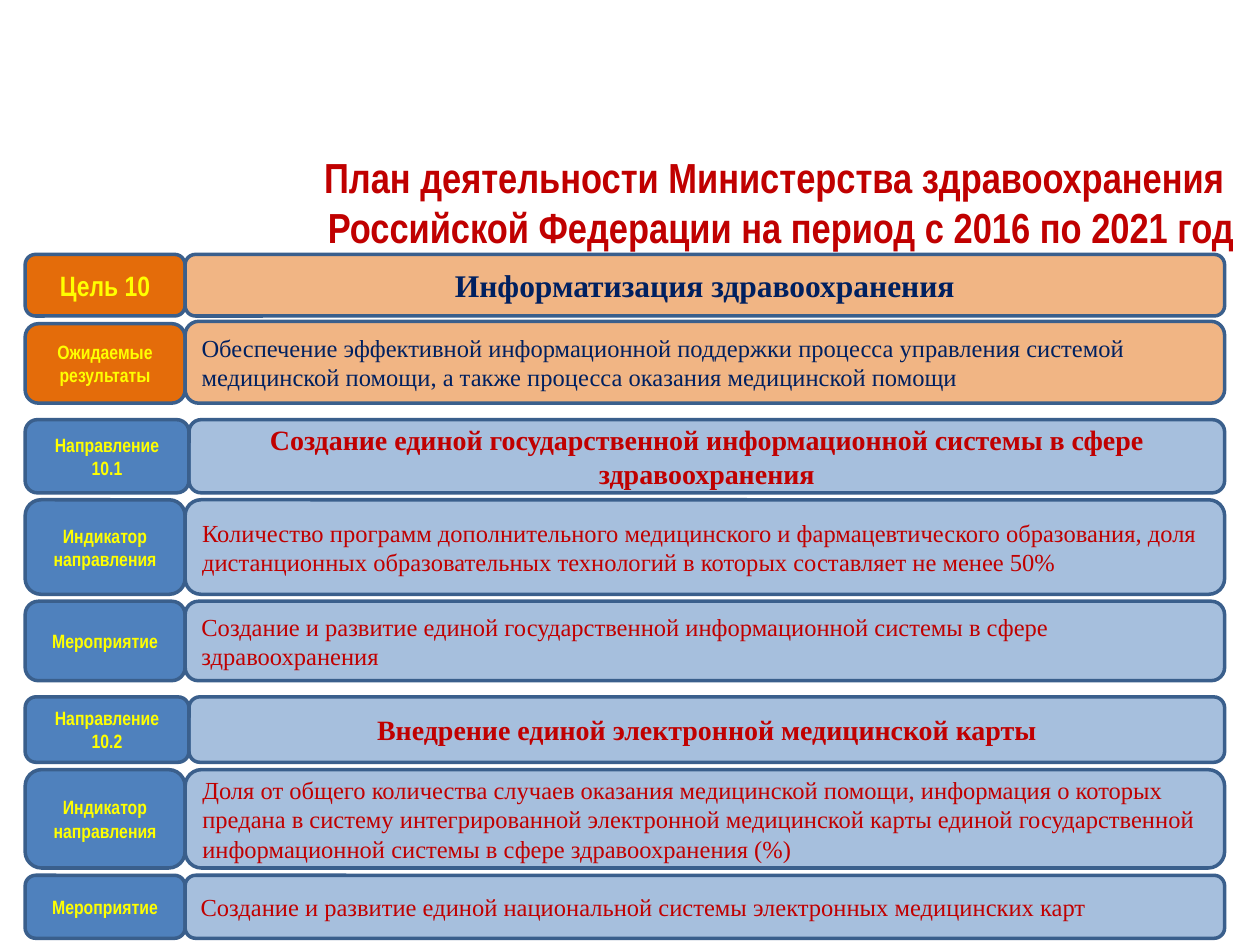
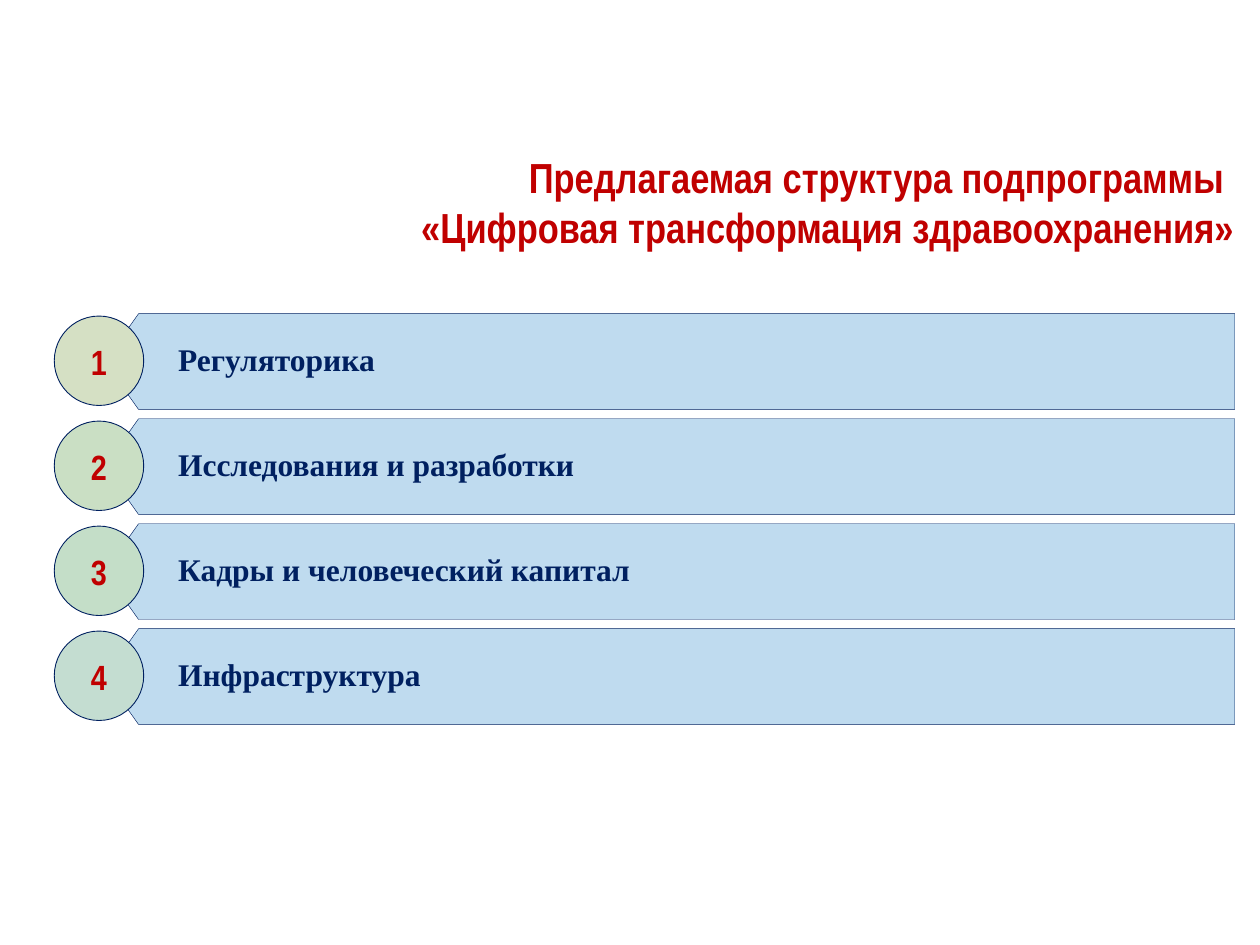
import pptx
import pptx.util
import pptx.dml.color
import pptx.enum.shapes
import pptx.enum.text
from lxml import etree
from pptx.oxml.ns import qn

Pt = pptx.util.Pt
SHAPE = pptx.enum.shapes.MSO_SHAPE
ALIGN = pptx.enum.text.PP_ALIGN
ANCHOR = pptx.enum.text.MSO_ANCHOR

COLORS = {"red": "C00000", "navy": "002060", "yellow": "FFFF00",
          "orange": "E46C0A", "blue": "4F81BD", "outline": "3A5F8C",
          "bar": "0070C0"}
NARROW, SERIF = "Arial Narrow", "Times New Roman"

PLAN_TITLE = ("План деятельности Министерства здравоохранения \v"
              "Российской Федерации на период с 2016 по 2021 год")
# fill, text colour, top, gap between rows, rows of (kind, height, label, text)
PLAN_GROUPS = [
    ("orange", "navy", 145.4, 3, [
        ("goal", 35.2, "Цель 10", "Информатизация здравоохранения"),
        ("result", 46.8, "Ожидаемые результаты",
         "Обеспечение эффективной информационной поддержки процесса управления "
         "системой медицинской помощи, а также процесса оказания медицинской помощи"),
    ]),
    ("blue", "red", 239.8, 4, [
        ("direction", 41.8, "Направление 10.1",
         "Создание единой государственной информационной системы в сфере здравоохранения"),
        ("item", 54, "Индикатор\nнаправления",
         "Количество программ дополнительного медицинского и фармацевтического "
         "образования, доля дистанционных образовательных технологий в которых "
         "составляет не менее 50%"),
        ("item", 45.4, "Мероприятие",
         "Создание и развитие единой государственной информационной системы "
         "в сфере здравоохранения"),
    ]),
    ("blue", "red", 398.2, 4.2, [
        ("direction", 37.4, "Направление 10.2",
         "Внедрение единой электронной медицинской карты"),
        ("item", 56.2, "Индикатор\nнаправления",
         "Доля от общего количества случаев оказания медицинской помощи, информация "
         "о которых предана в систему интегрированной электронной медицинской карты "
         "единой государственной информационной системы в сфере здравоохранения (%)"),
        ("item", 36, "Мероприятие",
         "Создание и развитие единой национальной системы электронных медицинских карт"),
    ]),
]
# kind: label width, label top trim, label size, text size, heading or not
ROW_KINDS = {"goal": (91.4, 0, 16, 18, True),
             "result": (91.4, 1.4, 11, 14, False),
             "direction": (93.6, 0, 11, 16, True),
             "item": (91.4, 0, 11, 14, False)}
PLAN_LEFT, PLAN_RIGHT = 14.4, 699.8

STRUCTURE_TITLE = "Предлагаемая структура подпрограммы \v«Цифровая трансформация здравоохранения»"
SECTIONS = [("Регуляторика", "D5E0C4"),
            ("Исследования и разработки", "CADFC4"),
            ("Кадры и человеческий капитал", "C4DEC8"),
            ("Инфраструктура", "C4DDD1")]
BAR_TOP, BAR_PITCH, BAR_HEIGHT = 179.3, 60, 54.7
BAR_LEFT, BAR_SHOULDER, BAR_RIGHT = 59.8, 79.2, 705.6
CIRCLE_LEFT, CIRCLE_SIZE = 31, 51.1
NUMBER_WIDTH, NUMBER_HEIGHT = 23.8, 31.7


def rgb(name):
    return pptx.dml.color.RGBColor.from_string(COLORS.get(name, name))


def write(sp, text, size, color, font=NARROW, bold=True,
          align=ALIGN.CENTER, anchor=ANCHOR.MIDDLE):
    tf = sp.text_frame
    tf.word_wrap = True
    tf.vertical_anchor = anchor
    tf.text = text
    for p in tf.paragraphs:
        p.alignment = align
        p.font.name, p.font.size, p.font.bold = font, Pt(size), bold
        p.font.color.rgb = rgb(color)
    return tf


def paint(sp, fill, line, width, opacity=100):
    sp.shadow.inherit = False
    sp.fill.solid()
    sp.fill.fore_color.rgb = rgb(fill)
    sp.line.color.rgb = rgb(line)
    sp.line.width = Pt(width)
    if opacity < 100:
        color = sp.element.spPr.find(qn("a:solidFill"))[0]
        etree.SubElement(color, qn("a:alpha")).set("val", str(opacity * 1000))


def add_shape(s, kind, *box):
    return s.shapes.add_shape(kind, *map(Pt, box))


def add_titled_slide(prs, title):
    s = prs.slides.add_slide(prs.slide_layouts[6])
    sp = s.shapes.add_textbox(Pt(14.4), Pt(82.8), Pt(697.7), Pt(62.6))
    write(sp, title, 24, "red", align=ALIGN.RIGHT, anchor=ANCHOR.TOP)
    return s


def add_plan_row(s, top, fill, color, kind, height, label, text):
    width, trim, label_size, size, heading = ROW_KINDS[kind]
    sp = add_shape(s, SHAPE.ROUNDED_RECTANGLE, PLAN_LEFT, top + trim, width, height - trim)
    paint(sp, fill, "outline", 2)
    write(sp, label, label_size, "yellow")

    left = PLAN_LEFT + width
    sp = add_shape(s, SHAPE.ROUNDED_RECTANGLE, left, top, PLAN_RIGHT - left, height)
    paint(sp, fill, "outline", 2, opacity=50)
    write(sp, text, size, color, SERIF, heading, ALIGN.CENTER if heading else ALIGN.LEFT)


def add_section(s, number, top, name, circle_fill):
    middle, bottom = top + BAR_HEIGHT / 2, top + BAR_HEIGHT
    corners = [(BAR_RIGHT, bottom), (BAR_SHOULDER, bottom), (BAR_LEFT, middle),
               (BAR_SHOULDER, top), (BAR_RIGHT, top)]
    start, *rest = [(Pt(x), Pt(y)) for x, y in corners]
    outline = s.shapes.build_freeform(*start)
    outline.add_line_segments(rest, close=True)
    bar = outline.convert_to_shape()
    paint(bar, "bar", "navy", 0.25, opacity=25)
    tf = write(bar, name, 18, "navy", SERIF, align=ALIGN.LEFT)
    tf.margin_left, tf.margin_right = Pt(42), Pt(8)
    tf.margin_top = tf.margin_bottom = Pt(4.3)
    tf.paragraphs[0].line_spacing = 0.9

    circle_top = middle - CIRCLE_SIZE / 2 - 0.5
    circle = add_shape(s, SHAPE.OVAL, CIRCLE_LEFT, circle_top, CIRCLE_SIZE, CIRCLE_SIZE)
    paint(circle, circle_fill, "navy", 0.5)

    sp = s.shapes.add_textbox(Pt(CIRCLE_LEFT + (CIRCLE_SIZE - NUMBER_WIDTH) / 2),
                              Pt(middle - NUMBER_HEIGHT / 2),
                              Pt(NUMBER_WIDTH), Pt(NUMBER_HEIGHT))
    write(sp, str(number), 20, "red", anchor=ANCHOR.TOP).word_wrap = False


def main():
    prs = pptx.Presentation()
    prs.slide_width, prs.slide_height = Pt(720), Pt(540)

    s = add_titled_slide(prs, PLAN_TITLE)
    for fill, color, top, gap, rows in PLAN_GROUPS:
        for kind, height, label, text in rows:
            add_plan_row(s, top, fill, color, kind, height, label, text)
            top += height + gap

    s = add_titled_slide(prs, STRUCTURE_TITLE)
    for i, (name, circle_fill) in enumerate(SECTIONS):
        add_section(s, i + 1, BAR_TOP + i * BAR_PITCH, name, circle_fill)

    prs.save("out.pptx")


if __name__ == "__main__":
    main()
